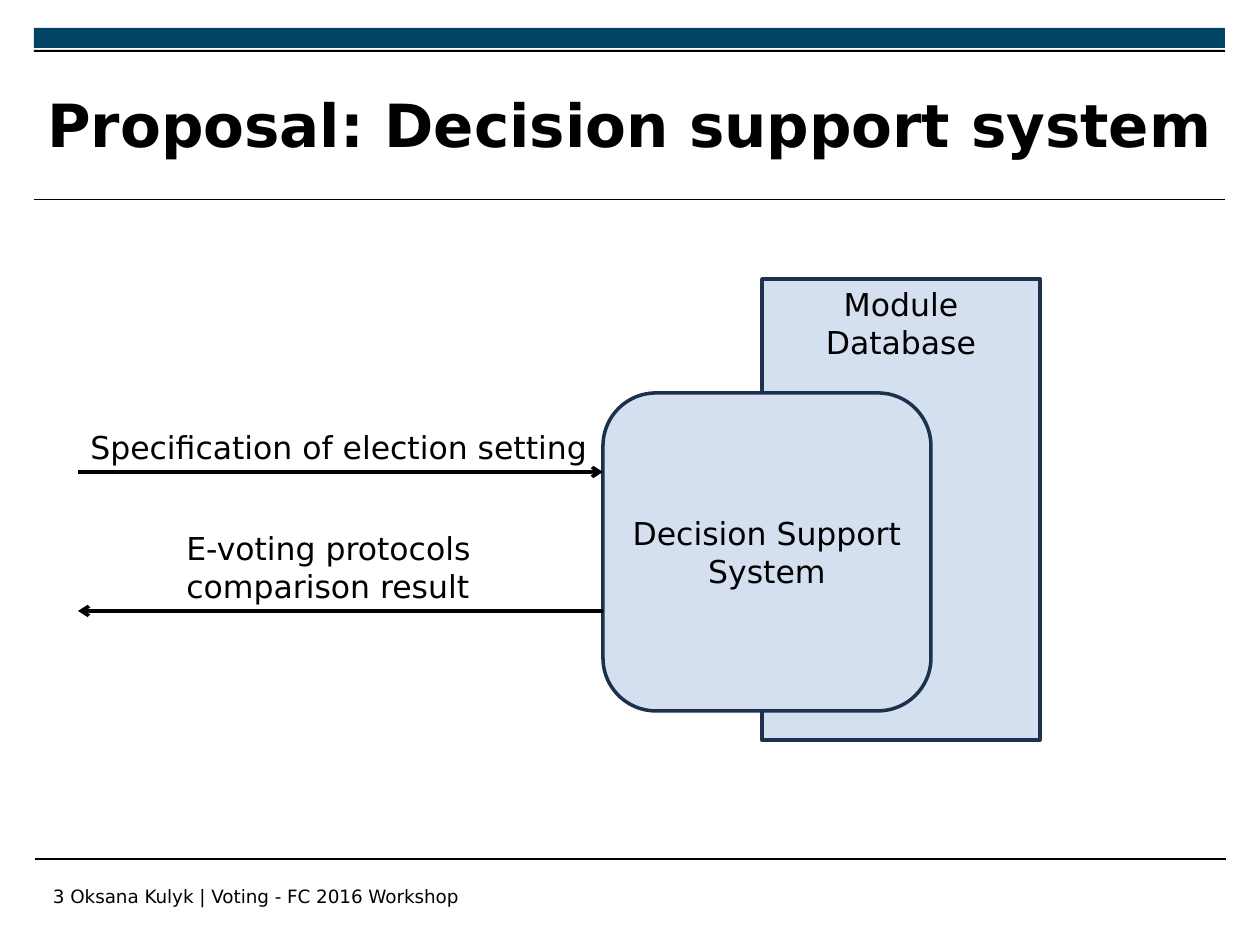
"""Build the decision support system slide."""
import pptx
import pptx.dml.color
import pptx.enum.shapes
import pptx.enum.text
import pptx.oxml.ns
import pptx.util
from lxml import etree

SHAPE = pptx.enum.shapes.MSO_SHAPE
ALIGN = pptx.enum.text.PP_ALIGN
ANCHOR = pptx.enum.text.MSO_ANCHOR
SCALE = 914400 / 126
FONT = "DejaVu Sans"
COLORS = {"bar": "004365", "ink": "000000", "box": "D4DFEF", "edge": "1C314E"}

BARS = [((34, 28, 1191, 20), "bar"), ((34, 50, 1191, 2), "ink")]
RULES = [(34, 200, 1225, 200), (35, 859, 1226, 859)]
LABELS = [
    ("Proposal: Decision support system", (35, 53, 1191, 142),
     {"size": 34, "bold": True, "anchor": ANCHOR.MIDDLE}),
    ("Oksana Kulyk | Voting - FC 2016 Workshop", (58, 879, 764, 49), {"size": 10.5}),
    ("3", (11, 879, 66, 49), {"size": 10.5, "align": ALIGN.RIGHT}),
]
BOXES = [
    ("Module Database", SHAPE.RECTANGLE, (762, 279, 278, 461), ANCHOR.TOP),
    ("Decision Support System", SHAPE.ROUNDED_RECTANGLE, (603, 393, 328, 318), ANCHOR.MIDDLE),
]
FLOWS = [
    ("Specification of election setting", (78, 422, 524, 50), (78, 472, 603, 472)),
    ("E-voting protocols\ncomparison result", (174, 523, 316, 89), (603, 611, 78, 611)),
]


def emu(place):
    return [round(n * SCALE) for n in place]


def rgb(name):
    return pptx.dml.color.RGBColor.from_string(COLORS[name])


def write(shape, text, size=18, bold=False, align=ALIGN.LEFT, anchor=ANCHOR.TOP, wrap=True):
    frame = shape.text_frame
    frame.text = text
    frame.word_wrap = wrap
    frame.vertical_anchor = anchor
    for para in frame.paragraphs:
        para.alignment = align
        para.font.name = FONT
        para.font.size = pptx.util.Pt(size)
        para.font.bold = bold
        para.font.color.rgb = rgb("ink")


def block(slide, kind, place, fill, edge=None):
    shape = slide.shapes.add_shape(kind, *emu(place))
    shape.shadow.inherit = False
    shape.fill.solid()
    shape.fill.fore_color.rgb = rgb(fill)
    if edge:
        shape.line.color.rgb = rgb(edge)
        shape.line.width = pptx.util.Pt(2)
    else:
        shape.line.fill.background()
    return shape


def rule(slide, ends, width, arrow=False):
    kind = pptx.enum.shapes.MSO_CONNECTOR.STRAIGHT
    line = slide.shapes.add_connector(kind, *emu(ends))
    line.line.color.rgb = rgb("ink")
    line.line.width = pptx.util.Pt(width)
    if arrow:
        tail = etree.SubElement(line.line._get_or_add_ln(), pptx.oxml.ns.qn("a:tailEnd"))
        tail.set("type", "arrow")
    etree.SubElement(line._element.spPr, pptx.oxml.ns.qn("a:effectLst"))


def main():
    deck = pptx.Presentation()
    deck.slide_width, deck.slide_height = emu((1260, 945))
    slide = deck.slides.add_slide(deck.slide_layouts[6])
    for place, fill in BARS:
        block(slide, SHAPE.RECTANGLE, place, fill)
    for ends in RULES:
        rule(slide, ends, 0.6)
    for text, place, form in LABELS:
        write(slide.shapes.add_textbox(*emu(place)), text, **form)
    for text, kind, place, anchor in BOXES:
        shape = block(slide, kind, place, "box", "edge")
        write(shape, text, align=ALIGN.CENTER, anchor=anchor)
    for text, place, ends in FLOWS:
        rule(slide, ends, 2, arrow=True)
        write(slide.shapes.add_textbox(*emu(place)), text, wrap=False)
    deck.save("out.pptx")


if __name__ == "__main__":
    main()
